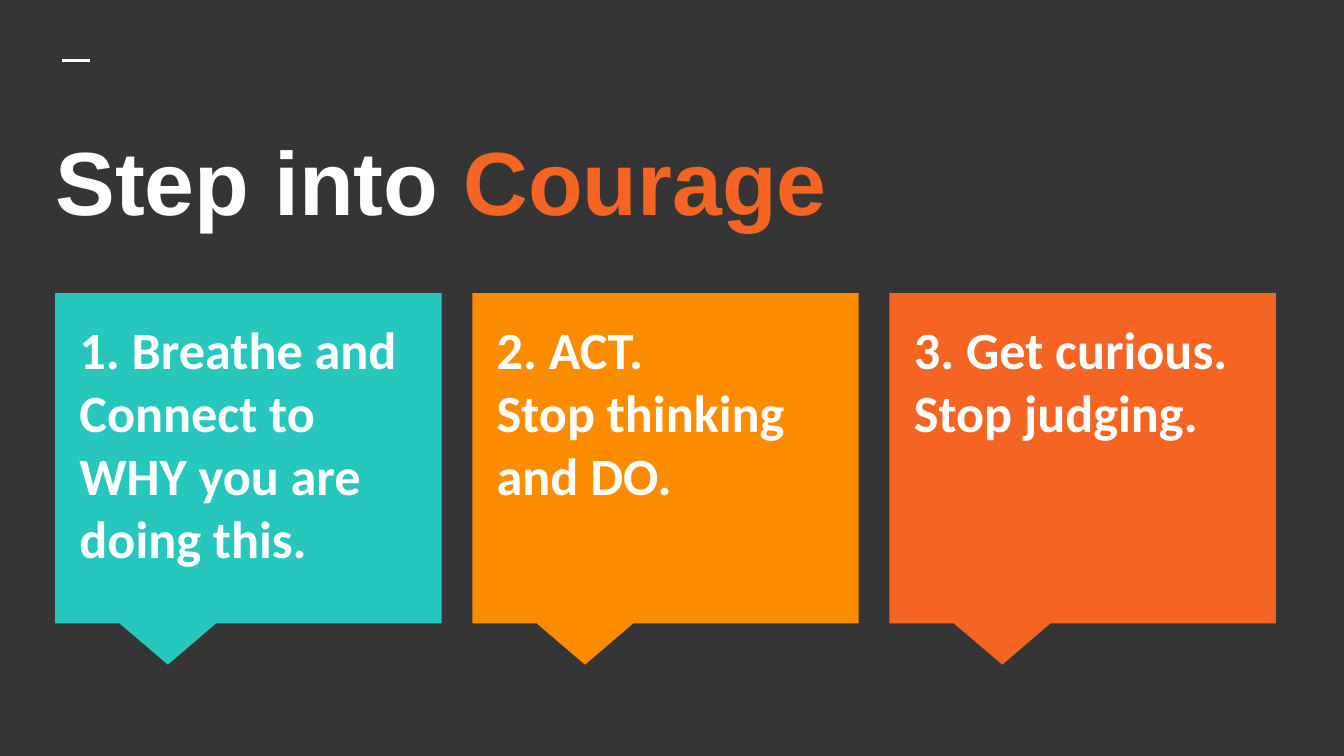
from lxml import etree
from pptx import Presentation
from pptx.dml.color import RGBColor
from pptx.enum import shapes, text
from pptx.oxml import ns
from pptx.util import Pt

# Content
HEADLINE = [("Step into ", "white"), ("Courage", "orange")]
STEPS = [
    (["1. Breathe and Connect to WHY you are doing this."], "teal"),
    (["2. ACT. ", "Stop thinking and DO."], "amber"),
    (["3. Get curious. Stop judging."], "orange"),
]

THEME = {
    "colors": {"dark": "353535", "white": "FFFFFF", "teal": "27C7BD",
               "amber": "FB8C00", "orange": "F46524"},
    "headline": ("Arial", 48),
    "step": ("Calibri", 28),
}

# Layout in points
SLIDE_SIZE = (720, 405)
HEADLINE_BOX = (22.5, 56, 679, 80.5)
ACCENT_LEFT, ACCENT_RIGHT, ACCENT_TOP = 33.5, 48, 32.5
CARD_LEFT, CARD_TOP, CARD_WIDTH, CARD_HEIGHT = 29.5, 157, 207, 177
CARD_PITCH = 223.5
CARD_POINTER = (-0.208, 0.625)
STEP_INSET_X, STEP_TOP, STEP_WIDTH, STEP_HEIGHT = 6, 163, 195, 157.5
TEXT_MARGIN = 7.2


def color(name):
    return RGBColor.from_string(THEME["colors"][name])


def format_frame(frame, anchor):
    frame.word_wrap = True
    frame.auto_size = text.MSO_AUTO_SIZE.NONE
    frame.vertical_anchor = anchor
    frame.margin_left = frame.margin_right = Pt(TEXT_MARGIN)
    frame.margin_top = frame.margin_bottom = Pt(TEXT_MARGIN)
    paragraph = frame.paragraphs[0]
    paragraph.alignment = text.PP_ALIGN.LEFT
    return paragraph


def add_run(paragraph, words, style, color_name):
    run = paragraph.add_run()
    run.text = words
    run.font.name, size = THEME[style]
    run.font.size = Pt(size)
    run.font.bold = True
    run.font.color.rgb = color(color_name)


def add_accent(slide):
    accent = slide.shapes.add_connector(
        shapes.MSO_CONNECTOR.STRAIGHT, Pt(ACCENT_LEFT), Pt(ACCENT_TOP),
        Pt(ACCENT_RIGHT), Pt(ACCENT_TOP))
    accent.line.color.rgb = color("white")
    accent.line.width = Pt(1.5)
    properties = accent._element.find(ns.qn("p:spPr"))
    etree.SubElement(properties, ns.qn("a:effectLst"))


def add_headline(slide):
    headline = slide.shapes.title
    headline.left, headline.top, headline.width, headline.height = map(Pt, HEADLINE_BOX)
    paragraph = format_frame(headline.text_frame, text.MSO_ANCHOR.MIDDLE)
    for words, color_name in HEADLINE:
        add_run(paragraph, words, "headline", color_name)


def add_step(slide, index, lines, color_name):
    left = CARD_LEFT + index * CARD_PITCH

    # Callout card
    card = slide.shapes.add_shape(
        shapes.MSO_SHAPE.RECTANGULAR_CALLOUT,
        Pt(left), Pt(CARD_TOP), Pt(CARD_WIDTH), Pt(CARD_HEIGHT))
    card.adjustments[0], card.adjustments[1] = CARD_POINTER
    card.shadow.inherit = False
    card.fill.solid()
    card.fill.fore_color.rgb = color(color_name)
    card.line.fill.background()

    # Step wording
    step = slide.shapes.add_textbox(
        Pt(left + STEP_INSET_X), Pt(STEP_TOP), Pt(STEP_WIDTH), Pt(STEP_HEIGHT))
    paragraph = format_frame(step.text_frame, text.MSO_ANCHOR.TOP)
    for number, line in enumerate(lines):
        if number:
            paragraph.add_line_break()
        add_run(paragraph, line, "step", "white")


def main():
    deck = Presentation()
    deck.slide_width, deck.slide_height = map(Pt, SLIDE_SIZE)
    slide = deck.slides.add_slide(deck.slide_layouts.get_by_name("Title Only"))
    slide.background.fill.solid()
    slide.background.fill.fore_color.rgb = color("dark")

    add_accent(slide)
    add_headline(slide)
    for index, (lines, color_name) in enumerate(STEPS):
        add_step(slide, index, lines, color_name)
    deck.save("out.pptx")


if __name__ == "__main__":
    main()
